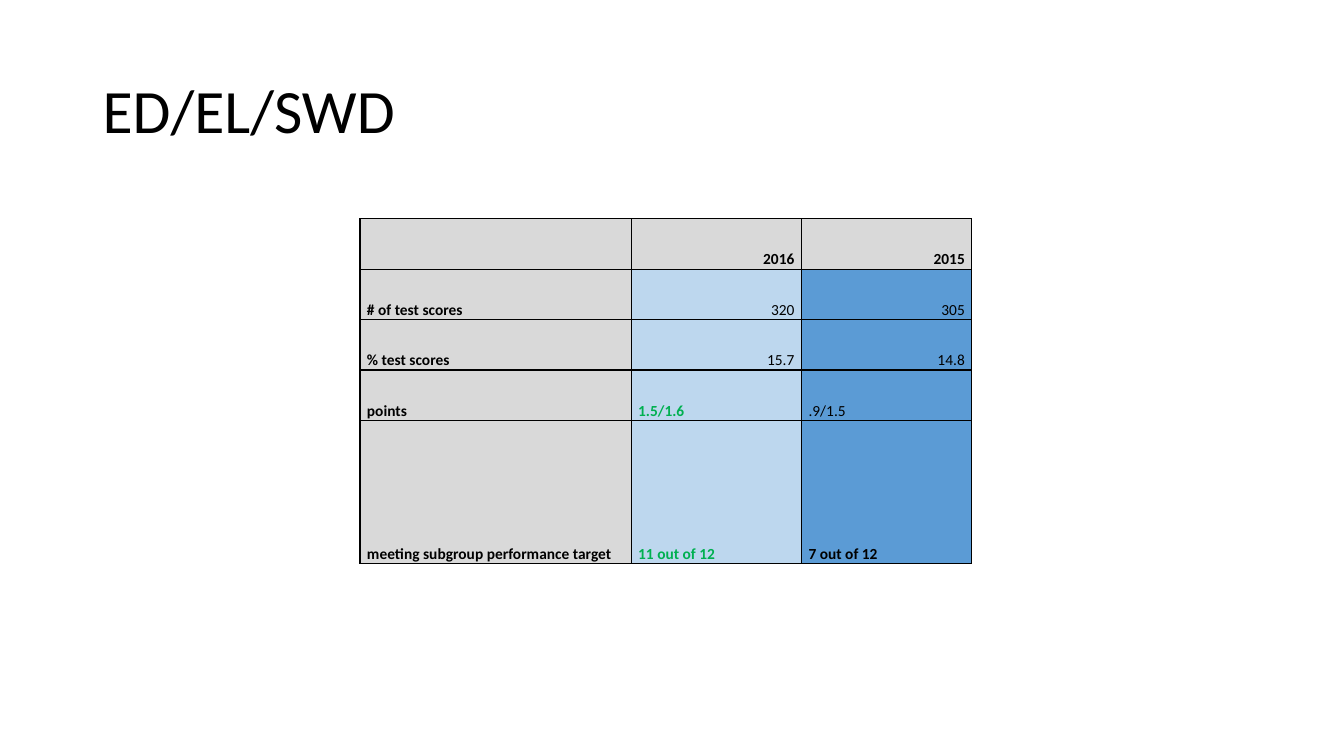
"""Build the ED/EL/SWD subgroup results slide."""
from dataclasses import dataclass

import lxml.etree
import pptx
import pptx.dml.color
import pptx.enum.text
import pptx.oxml.ns
import pptx.util

Inches = pptx.util.Inches
Pt = pptx.util.Pt
RGB = pptx.dml.color.RGBColor.from_string
ALIGN = pptx.enum.text.PP_ALIGN
ANCHOR = pptx.enum.text.MSO_ANCHOR


@dataclass(frozen=True)
class Theme:
    """Hold the colours, font and type sizes of the slide."""
    font: str = "Calibri"
    title_size: int = 44
    cell_size: int = 11
    text: str = "000000"
    improved: str = "00B050"
    label_fill: str = "D9D9D9"
    year_fills: tuple = ("BDD7EE", "5B9BD5")
    border: str = "000000"
    border_width: int = 1


THEME = Theme()
COLUMN_WIDTHS = (2.69, 1.69, 1.69)
ROW_HEIGHTS = (0.5, 0.5, 0.5, 0.5, 1.42)
ROWS = (
    ("", "2016", "2015"),
    ("# of test scores", "320", "305"),
    ("% test scores", "15.7", "14.8"),
    ("points", "1.5/1.6", ".9/1.5"),
    ("meeting subgroup performance target", "11 out of 12", "7 out of 12"),
)
IMPROVED = {"1.5/1.6", "11 out of 12"}
BOLD_RESULTS = IMPROVED | {"7 out of 12"}


def style_paragraph(p, text, size, color=THEME.text, bold=False, spacing=1.0):
    """Fill a paragraph and set its font and line spacing."""
    p.text = text
    p.line_spacing = spacing
    p.font.name = THEME.font
    p.font.size = Pt(size)
    p.font.bold = bold
    p.font.color.rgb = RGB(color)


def add_title(slide, text):
    """Add the slide title as a text box."""
    sp = slide.shapes.add_textbox(Inches(0.92), Inches(0.4), Inches(11.5), Inches(1.45))
    tf = sp.text_frame
    tf.word_wrap = True
    tf.vertical_anchor = ANCHOR.MIDDLE
    style_paragraph(tf.paragraphs[0], text, THEME.title_size, spacing=0.9)


def add_borders(cell):
    """Draw a solid line on all four sides of a cell."""
    tc_pr = cell._tc.get_or_add_tcPr()
    qn = pptx.oxml.ns.qn
    for index, side in enumerate(("a:lnL", "a:lnR", "a:lnT", "a:lnB")):
        ln = lxml.etree.Element(qn(side), w=str(Pt(THEME.border_width)))
        fill = lxml.etree.SubElement(ln, qn("a:solidFill"))
        lxml.etree.SubElement(fill, qn("a:srgbClr"), val=THEME.border)
        tc_pr.insert(index, ln)


def style_cell(cell, text, is_label, fill):
    """Write one table cell with its fill, borders and emphasis."""
    cell.margin_left = cell.margin_right = Inches(0.07)
    cell.margin_top = cell.margin_bottom = 0
    cell.vertical_anchor = ANCHOR.BOTTOM
    cell.fill.solid()
    cell.fill.fore_color.rgb = RGB(fill)
    p = cell.text_frame.paragraphs[0]
    color = THEME.improved if text in IMPROVED else THEME.text
    bold = is_label or text in BOLD_RESULTS
    style_paragraph(p, text, THEME.cell_size, color, bold, 1.07)
    is_number = text.replace(".", "").isdigit()
    p.alignment = ALIGN.RIGHT if is_number else ALIGN.LEFT
    add_borders(cell)


def add_results_table(slide):
    """Add the table that compares the two years."""
    table = slide.shapes.add_table(
        len(ROWS), len(COLUMN_WIDTHS), Inches(3.57), Inches(2.17),
        Inches(sum(COLUMN_WIDTHS)), Inches(sum(ROW_HEIGHTS))).table
    table.horz_banding = False
    table.first_row = False
    for column, width in zip(table.columns, COLUMN_WIDTHS):
        column.width = Inches(width)
    for row, height in zip(table.rows, ROW_HEIGHTS):
        row.height = Inches(height)
    for r, texts in enumerate(ROWS):
        for c, text in enumerate(texts):
            is_label = r == 0 or c == 0
            fill = THEME.label_fill if is_label else THEME.year_fills[c - 1]
            style_cell(table.cell(r, c), text, is_label, fill)


def main():
    """Build and save the slide."""
    prs = pptx.Presentation()
    prs.slide_width = Inches(13.33)
    prs.slide_height = Inches(7.5)
    slide = prs.slides.add_slide(prs.slide_layouts[6])
    add_title(slide, "ED/EL/SWD")
    add_results_table(slide)
    prs.save("out.pptx")


if __name__ == "__main__":
    main()
